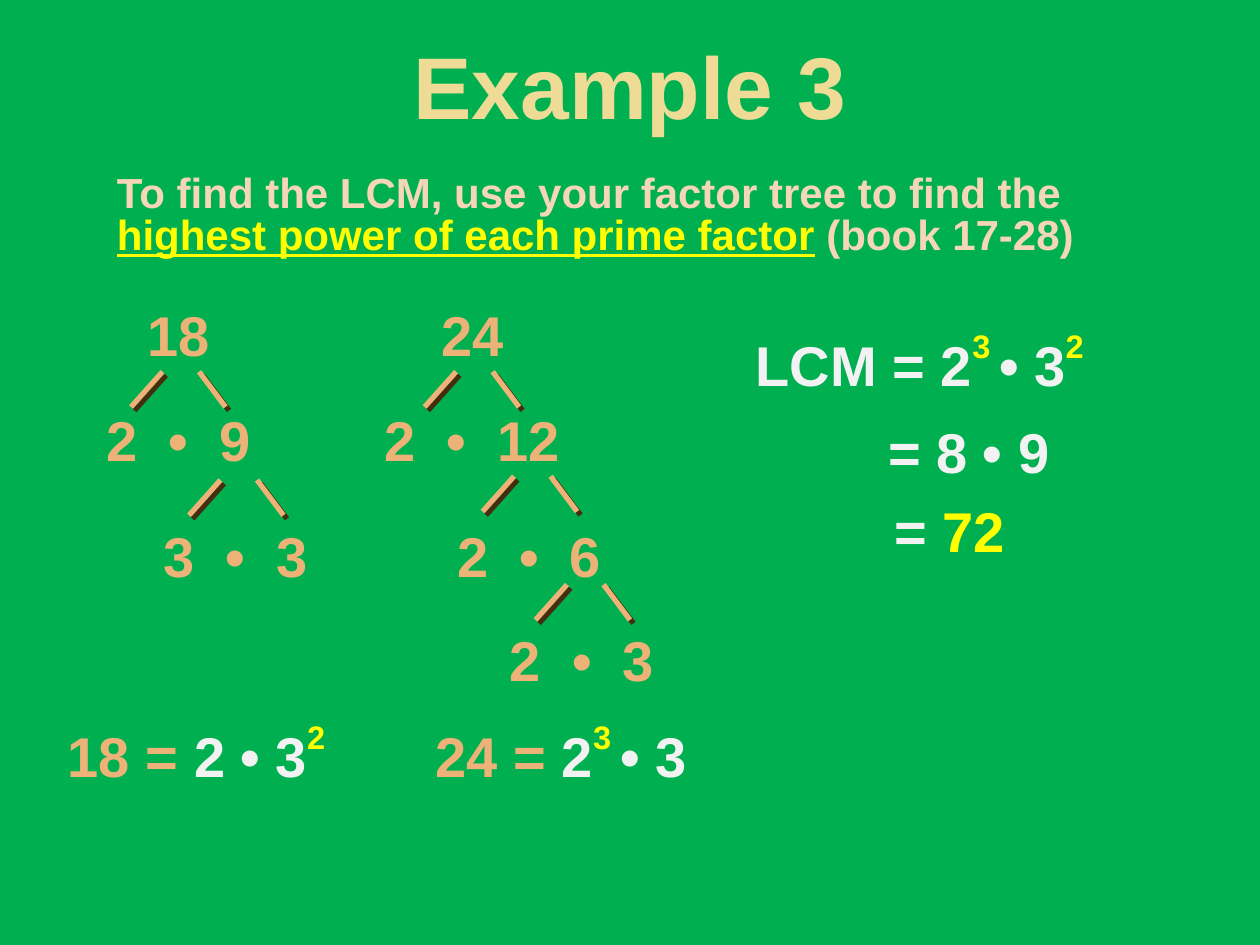
from lxml import etree
from pptx import Presentation
from pptx.dml.color import RGBColor
from pptx.enum import shapes, text
from pptx.oxml import ns
from pptx.util import Inches, Pt

HUES = {"back": "00B050", "title": "EEDB96", "lead": "F5D6B7", "key": "FFFF00",
        "tree": "EDB277", "math": "F2F2F2", "dark": "432E0F", "shade": "000000"}


def rgb(name):
    return RGBColor.from_string(HUES[name])


def add_shade(fx, hue, dist, alpha):
    """Put a hard shadow to the lower right into an effect list."""
    drop = etree.SubElement(fx, ns.qn("a:outerShdw"), dist=str(Pt(dist)),
                            dir="2700000", algn="ctr", rotWithShape="0")
    tint = etree.SubElement(drop, ns.qn("a:srgbClr"), val=HUES[hue])
    etree.SubElement(tint, ns.qn("a:alpha"), val=str(alpha * 1000))


def add_runs(para, parts, size, shade=False):
    """Each part is (words, colour, style); style is "", "up" or "line"."""
    for words, hue, style in parts:
        run = para.add_run()
        run.text = words
        font = run.font
        font.name, font.size, font.bold = "Arial", Pt(size), True
        font.color.rgb = rgb(hue)
        props = run.font._element
        if style == "up":
            props.set("baseline", "50000")
        if style == "line":
            font.underline = True
        if shade:
            fx = etree.Element(ns.qn("a:effectLst"))
            props.find(ns.qn("a:solidFill")).addnext(fx)
            add_shade(fx, "shade", 2.8, 60)


def add_box(slide, box):
    frame = slide.shapes.add_textbox(*map(Inches, box)).text_frame
    frame.word_wrap = True
    return frame


def add_line(slide, start, end):
    line = slide.shapes.add_connector(shapes.MSO_CONNECTOR.STRAIGHT,
                                      *map(Inches, start + end))
    line.line.color.rgb = rgb("tree")
    line.line.width = Pt(3)
    fx = etree.SubElement(line._element.spPr, ns.qn("a:effectLst"))
    add_shade(fx, "dark", 2.8, 100)


def add_title(slide, box, words):
    title = slide.shapes.title
    title.left, title.top, title.width, title.height = map(Inches, box)
    frame = title.text_frame
    frame.auto_size = text.MSO_AUTO_SIZE.NONE
    frame.vertical_anchor = text.MSO_ANCHOR.TOP
    para = frame.paragraphs[0]
    para.alignment = text.PP_ALIGN.CENTER
    para.line_spacing = 0.85
    add_runs(para, [(words, "title", "")], 50, True)


def add_lead(slide, box, parts):
    para = add_box(slide, box).paragraphs[0]
    para.line_spacing = 0.85
    add_runs(para, parts, 24, True)


def add_tree(slide, box, rows, forks):
    """Rows are (shift, drop, words), forks (shift, drop), from the top centre."""
    left, top, width, height = box
    mid = left + width / 2
    for shift, drop, words in rows:
        frame = add_box(slide, (left + shift, top + drop, width, height))
        para = frame.paragraphs[0]
        para.alignment = text.PP_ALIGN.CENTER
        para.line_spacing = 0.85
        add_runs(para, [(words, "tree", "")], 32, True)
    for shift, drop in forks:
        x, y = mid + shift, top + drop
        add_line(slide, (x, y), (x - 0.25, y + 0.28))
        add_line(slide, (x + 0.29, y), (x + 0.5, y + 0.28))


def add_math(slide, box, lines):
    """Lines are (indent, space before, parts)."""
    frame = add_box(slide, box)
    for i, (indent, space, parts) in enumerate(lines):
        para = frame.add_paragraph() if i else frame.paragraphs[0]
        para.space_before = Pt(space)
        para._p.get_or_add_pPr().set("marL", str(Inches(indent)))
        add_runs(para, parts, 32)


def main():
    deck = Presentation()
    deck.slide_width, deck.slide_height = Inches(10), Inches(7.5)
    slide = deck.slides.add_slide(deck.slide_layouts[5])
    slide.background.fill.solid()
    slide.background.fill.fore_color.rgb = rgb("back")

    # Heading and rule
    add_title(slide, (0.94, 0.33, 8.12, 0.81), "Example 3")
    add_lead(slide, (0.83, 1.33, 8.5, 0.79), [
        ("To find the LCM, use your factor tree to find the ", "lead", ""),
        ("highest power of each prime factor", "key", "line"),
        (" (book 17-28)", "lead", "")])

    # Factor trees
    add_tree(slide, (-0.58, 2.42, 4, 0.56),
             [(0, 0, "18"), (0, 0.83, "2  •  9"), (0.45, 1.75, "3  •  3")],
             [(-0.13, 0.53), (0.33, 1.39)])
    add_tree(slide, (1.75, 2.42, 4, 0.56),
             [(0, 0, "24"), (0, 0.83, "2  •  12"), (0.45, 1.75, "2  •  6"),
              (0.87, 2.58, "2  •  3")],
             [(-0.13, 0.53), (0.33, 1.36), (0.75, 2.22)])

    # Least common multiple
    add_math(slide, (5.9, 2.54, 3.69, 3.35), [
        (0, 0, [("LCM = 2", "math", ""), ("3 ", "key", "up"),
                ("• 3", "math", ""), ("2", "key", "up")]),
        (1.05, 11, [("= 8 • 9", "math", "")]),
        (1.1, 7, [("= ", "math", ""), ("72", "key", "")])])

    # Prime powers
    add_math(slide, (0.44, 5.64, 2.73, 0.92), [
        (0, 0, [("18 = ", "tree", ""), ("2 • 3", "math", ""), ("2", "key", "up")])])
    add_math(slide, (3.36, 5.64, 2.73, 0.92), [
        (0, 0, [("24 = ", "tree", ""), ("2", "math", ""), ("3 ", "key", "up"),
                ("• 3", "math", "")])])

    deck.save("out.pptx")


if __name__ == "__main__":
    main()
